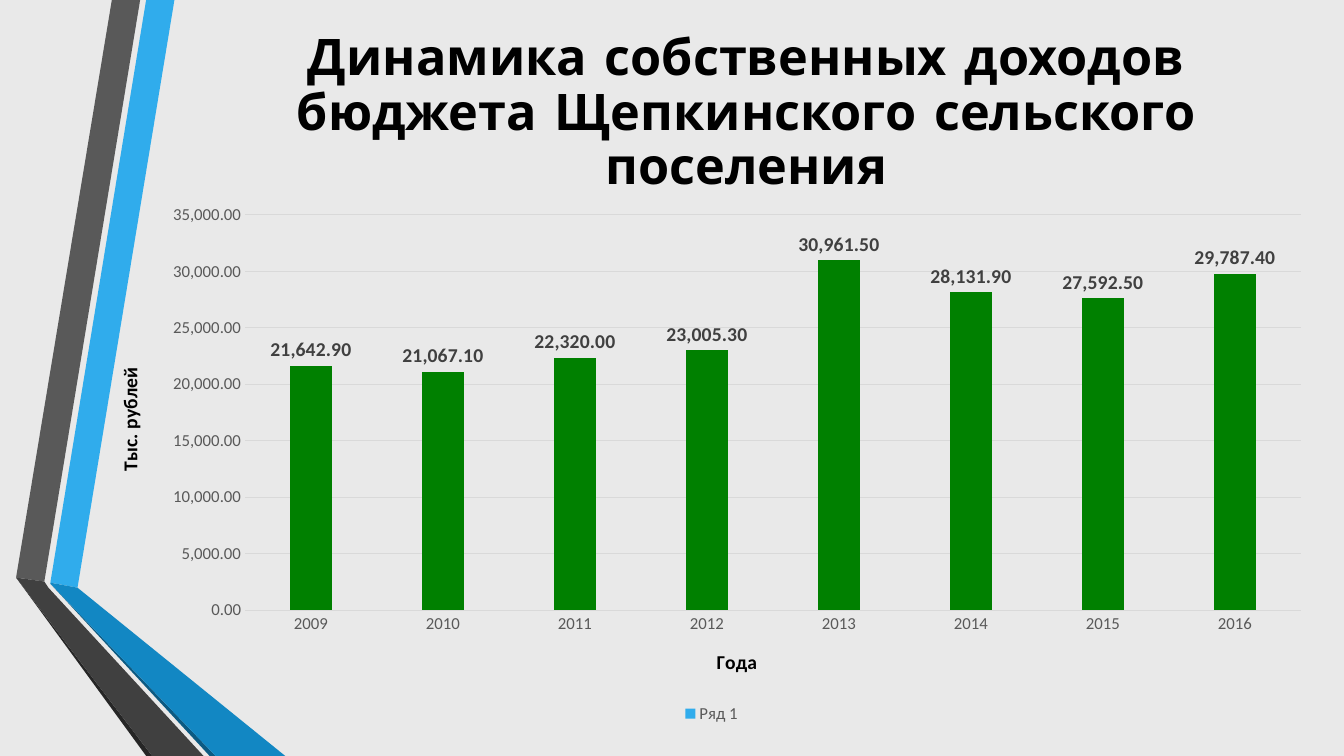
"""Build a slide with a column chart of a settlement's own budget revenue."""
from lxml import etree
from pptx import Presentation
from pptx.chart.data import CategoryChartData
from pptx.dml.color import RGBColor
from pptx.enum.chart import XL_CHART_TYPE, XL_LABEL_POSITION, XL_LEGEND_POSITION, XL_TICK_MARK
from pptx.enum.text import MSO_ANCHOR, PP_ALIGN
from pptx.util import Pt

COLUMNS = XL_CHART_TYPE.COLUMN_CLUSTERED
OUTSIDE = XL_LABEL_POSITION.OUTSIDE_END
BOTTOM = XL_LEGEND_POSITION.BOTTOM
NO_TICK = XL_TICK_MARK.NONE
MIDDLE = MSO_ANCHOR.MIDDLE
CENTER = PP_ALIGN.CENTER

COLORS = {
    "background": "E9E9E9", "black": "000000", "bar": "008000",
    "blue": "30ACEC", "blue_fold": "1287C3", "blue_edge": "0C5A82",
    "gray": "595959", "gray_fold": "404040", "gray_edge": "262626",
    "grid": "D9D9D9",
}
RIBBONS = [
    ("blue", [(36, 416.2), (55.4, 419.8), (124.6, 0), (104.4, 0)]),
    ("gray", [(100.1, 0), (79.9, 0), (11.5, 412.6), (31.7, 415.4)]),
    ("gray_edge", [(11.5, 412.6), (104.4, 540), (108.7, 540)]),
    ("blue_edge", [(36, 416.9), (149.8, 540), (154.1, 540)]),
    ("blue_fold", [(36, 416.2), (36, 416.9), (154.1, 540), (203.8, 540), (55.4, 419.8)]),
    ("gray_fold", [(11.5, 412.6), (108.7, 540), (145.4, 540), (34.6, 419.8), (31.7, 415.4)]),
]
REVENUE = {
    "2009": 21642.9, "2010": 21067.1, "2011": 22320, "2012": 23005.3,
    "2013": 30961.5, "2014": 28131.9, "2015": 27592.5, "2016": 29787.4,
}
PLOT_LAYOUT = {
    "layoutTarget": "inner", "xMode": "edge", "yMode": "edge",
    "x": 0.12, "y": 0.04, "w": 0.86, "h": 0.74,
}


def rgb(name):
    return RGBColor.from_string(COLORS[name])


def style_font(font, size, color, bold=False, name="Calibri"):
    font.size = Pt(size)
    font.bold = bold
    font.name = name
    font.color.rgb = rgb(color)


deck = Presentation()
deck.slide_width, deck.slide_height = Pt(960), Pt(540)
page = deck.slides.add_slide(deck.slide_layouts[6])
page.background.fill.solid()
page.background.fill.fore_color.rgb = rgb("background")

for color, points in RIBBONS:
    corners = [(Pt(x), Pt(y)) for x, y in points]
    builder = page.shapes.build_freeform(*corners[0], scale=1.0)
    builder.add_line_segments(corners[1:], close=True)
    ribbon = builder.convert_to_shape()
    ribbon.shadow.inherit = False
    ribbon.fill.solid()
    ribbon.fill.fore_color.rgb = rgb(color)
    ribbon.line.fill.background()

title_box = page.shapes.add_textbox(Pt(123.1), Pt(12.2), Pt(820.1), Pt(138.2))
title_frame = title_box.text_frame
title_frame.word_wrap = True
title_frame.vertical_anchor = MIDDLE
title = title_frame.paragraphs[0]
title.text = "Динамика собственных доходов бюджета Щепкинского сельского поселения"
title.alignment = CENTER
title.line_spacing = 0.9
style_font(title.font, 36, "black", True, "Comic Neue")

data = CategoryChartData(number_format="#,##0.00")
data.categories = REVENUE.keys()
data.add_series("Ряд 1", REVENUE.values())
chart = page.shapes.add_chart(COLUMNS, Pt(69.8), Pt(138.2), Pt(877), Pt(381.6), data).chart
style_font(chart.font, 10, "black")
chart.has_title = False
chart.has_legend = True
chart.legend.position = BOTTOM
chart.legend.include_in_layout = False
style_font(chart.legend.font, 12, "gray")

plot = chart.plots[0]
plot.gap_width = 219
plot.overlap = -27
plot.vary_by_categories = False
series = plot.series[0]
series.format.fill.solid()
series.format.fill.fore_color.rgb = rgb("blue")
for index in range(len(REVENUE)):
    bar_fill = series.points[index].format.fill
    bar_fill.solid()
    bar_fill.fore_color.rgb = rgb("bar")
labels = series.data_labels
labels.show_value = True
labels.position = OUTSIDE
style_font(labels.font, 14, "gray_fold", True)

for axis, caption in ((chart.category_axis, "Года"), (chart.value_axis, "Тыс. рублей")):
    axis.major_tick_mark = axis.minor_tick_mark = NO_TICK
    style_font(axis.tick_labels.font, 12, "gray")
    caption_para = axis.axis_title.text_frame.paragraphs[0]
    caption_para.text = caption
    style_font(caption_para.font, 14, "black", True)

value_axis = chart.value_axis
value_axis.minimum_scale, value_axis.maximum_scale = 0, 35000
value_axis.major_unit = 5000
value_axis.tick_labels.number_format = "#,##0.00"
value_axis.tick_labels.number_format_is_linked = False
value_axis.format.line.fill.background()
for line in (chart.category_axis.format.line, value_axis.major_gridlines.format.line):
    line.color.rgb = rgb("grid")
    line.width = Pt(0.75)

plot_area = chart.element.find(".//{*}plotArea")
namespace = etree.QName(plot_area).namespace
for old_layout in plot_area.findall("{*}layout"):
    plot_area.remove(old_layout)
layout = etree.Element(f"{{{namespace}}}layout")
manual = etree.SubElement(layout, f"{{{namespace}}}manualLayout")
for tag, value in PLOT_LAYOUT.items():
    etree.SubElement(manual, f"{{{namespace}}}{tag}").set("val", str(value))
plot_area.insert(0, layout)

deck.save("out.pptx")
